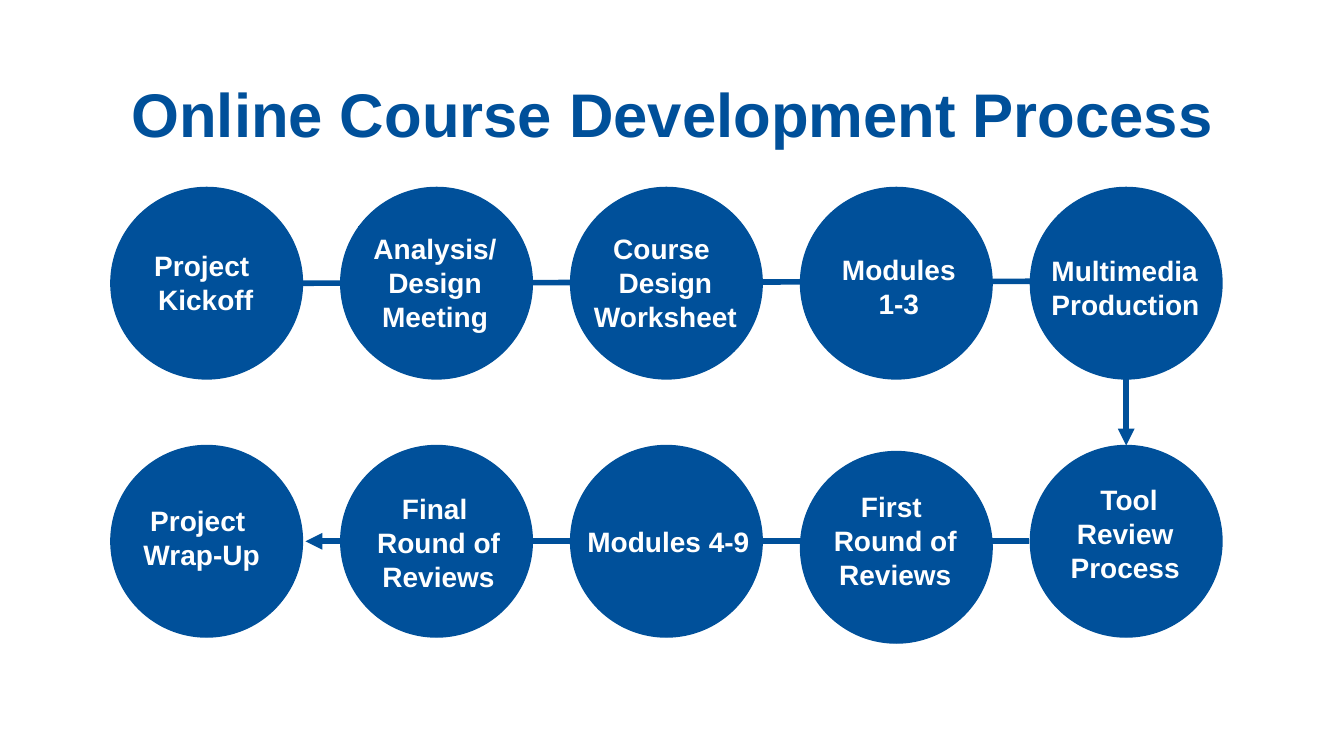
from dataclasses import dataclass

from lxml.etree import SubElement
from pptx import Presentation
from pptx.dml.color import RGBColor
from pptx.enum.shapes import MSO_CONNECTOR, MSO_SHAPE
from pptx.enum.text import MSO_ANCHOR, PP_ALIGN
from pptx.oxml.ns import qn
from pptx.util import Inches, Pt


@dataclass(frozen=True)
class Theme:
    """Colours, font and type sizes of the slide."""
    blue: RGBColor = RGBColor(0x00, 0x50, 0x9A)
    white: RGBColor = RGBColor(0xFF, 0xFF, 0xFF)
    font: str = "Arial"
    head: int = 44
    body: int = 20


class Board:
    """Draws styled elements on one slide."""

    def __init__(self, slide, theme):
        self.slide = slide
        self.theme = theme

    def letter(self, frame, lines, size, color, align):
        frame.word_wrap = True
        frame.text = "\n".join(lines)
        for para in frame.paragraphs:
            para.alignment = align
            for run in para.runs:
                run.font.name = self.theme.font
                run.font.size = Pt(size)
                run.font.bold = True
                run.font.color.rgb = color

    def title(self, text, box):
        shape = self.slide.shapes.title
        shape.left, shape.top, shape.width, shape.height = map(Inches, box)
        self.letter(shape.text_frame, [text], self.theme.head,
                    self.theme.blue, PP_ALIGN.CENTER)

    def line(self, start, end):
        link = self.slide.shapes.add_connector(
            MSO_CONNECTOR.STRAIGHT, *map(Inches, start + end))
        link.line.color.rgb = self.theme.blue
        link.line.width = Pt(4)
        props = link.element.spPr
        SubElement(props.get_or_add_ln(), qn("a:tailEnd"), type="triangle")
        SubElement(props, qn("a:effectLst"))

    def shape(self, kind, box, width):
        shape = self.slide.shapes.add_shape(kind, *map(Inches, box))
        shape.shadow.inherit = False
        shape.fill.solid()
        shape.fill.fore_color.rgb = self.theme.blue
        shape.line.color.rgb = self.theme.blue
        shape.line.width = Pt(width)
        return shape

    def circle(self, left, top, size):
        self.shape(MSO_SHAPE.OVAL, (left, top, size, size), 1)

    def label(self, lines, box, align=PP_ALIGN.CENTER, filled=False):
        if filled:
            shape = self.shape(MSO_SHAPE.RECTANGLE, box, 0.75)
        else:
            shape = self.slide.shapes.add_textbox(*map(Inches, box))
        shape.text_frame.vertical_anchor = MSO_ANCHOR.TOP
        self.letter(shape.text_frame, lines, self.theme.body,
                    self.theme.white, align)


LEFT, STEP, SIZE = 1.1, 2.28, 1.9
ROWS = (1.86, 4.42)
LINES = (
    ((3, 2.81), (10.51, 2.79)),
    ((11.17, 3.76), (11.17, 4.42)),
    ((10.21, 5.37), (3.03, 5.37)),
)
PLATES = (
    (["Analysis/", "Design Meeting"], (3.56, 2.25, 1.51, 1.11)),
    (["Modules 1-3"], (8.11, 2.46, 1.61, 0.77)),
)
LABELS = (
    (["Project ", "Kickoff"], (1.09, 2.42, 1.9, 0.77)),
    (["Course ", "Design", "Worksheet"], (5.65, 2.25, 1.9, 1.11)),
    ([" Tool Review", "Process"], (10.33, 4.74, 1.66, 1.11)),
    (["First ", "Round of Reviews"], (7.93, 4.81, 1.9, 1.11)),
    (["Modules 4-9"], (5.68, 5.15, 1.9, 0.44)),
    (["Final ", "Round of Reviews"], (3.4, 4.83, 1.9, 1.11)),
    (["Project ", "Wrap-Up"], (1.05, 4.95, 1.9, 0.77)),
)


def main():
    """Build the process slide and save it."""
    deck = Presentation()
    deck.slide_width, deck.slide_height = Inches(13.33), Inches(7.5)
    board = Board(deck.slides.add_slide(deck.slide_layouts[5]), Theme())
    board.title("Online Course Development Process", (1.14, 0.7, 11.07, 0.84))
    for start, end in LINES:
        board.line(start, end)
    for row, top in enumerate(ROWS):
        for col in range(5):
            drop = 0.06 if (row, col) == (1, 3) else 0
            board.circle(LEFT + col * STEP, top + drop, SIZE)
    for lines, box in PLATES:
        board.label(lines, box, filled=True)
    for lines, box in LABELS:
        board.label(lines, box)
    board.label(["Multimedia Production"], (10.33, 2.47, 1.76, 0.77),
                PP_ALIGN.LEFT)
    deck.save("out.pptx")


if __name__ == "__main__":
    main()
